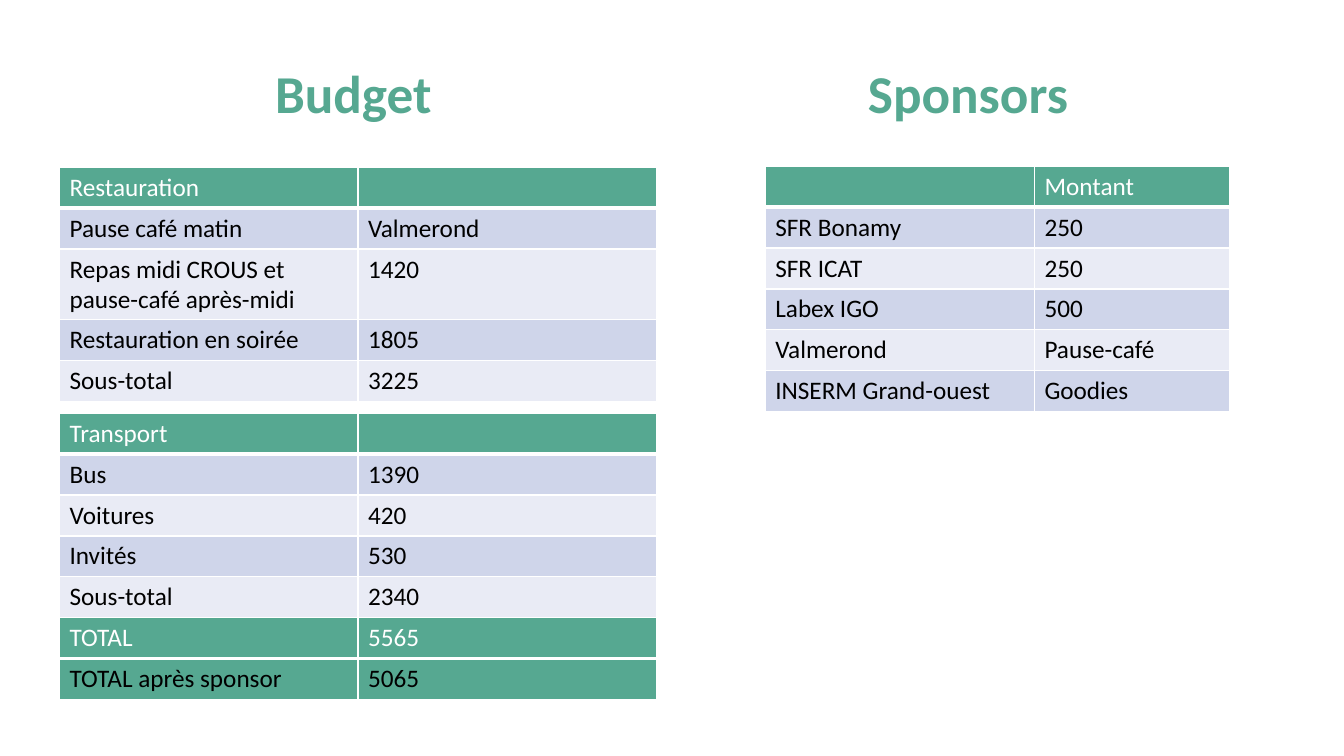
from lxml import etree
from pptx import Presentation
from pptx.dml.color import RGBColor
from pptx.enum.text import MSO_ANCHOR
from pptx.oxml.ns import qn
from pptx.util import Inches, Pt

GREEN = RGBColor(0x56, 0xA8, 0x91)
BLUE_BAND = RGBColor(0xCF, 0xD5, 0xEA)
PALE_BAND = RGBColor(0xE9, 0xEB, 0xF5)
WHITE = RGBColor(0xFF, 0xFF, 0xFF)
BLACK = RGBColor(0, 0, 0)
BANDS = (BLUE_BAND, PALE_BAND)

CATERING = [
    ("Restauration", ""),
    ("Pause café matin", "Valmerond"),
    ("Repas midi CROUS et pause-café après-midi", "1420"),
    ("Restauration en soirée", "1805"),
    ("Sous-total", "3225"),
]
TRANSPORT = [
    ("Transport", ""),
    ("Bus", "1390"),
    ("Voitures", "420"),
    ("Invités", "530"),
    ("Sous-total", "2340"),
]
TOTALS = [("TOTAL", "5565"), ("TOTAL après sponsor", "5065")]
SPONSORS = [
    ("", "Montant"),
    ("SFR Bonamy", "250"),
    ("SFR ICAT", "250"),
    ("Labex IGO", "500"),
    ("Valmerond", "Pause-café"),
    ("INSERM Grand-ouest", "Goodies"),
]

ROW = Pt(29.2)
LEFT = 0.59
TRANSPORT_TOP = Inches(4.1)
BUDGET_COLUMNS = (2.96, 2.96)
TITLES = [("Budget", 2.63, 1.84), ("Sponsors", 8.51, 2.29)]
TABLES = [
    (CATERING, LEFT, Inches(1.66), BUDGET_COLUMNS, BANDS),
    (TRANSPORT, LEFT, TRANSPORT_TOP, BUDGET_COLUMNS, BANDS),
    (TOTALS, LEFT, TRANSPORT_TOP + len(TRANSPORT) * ROW, BUDGET_COLUMNS, (GREEN,)),
    (SPONSORS, 7.59, Inches(1.65), (2.67, 1.94), BANDS),
]


def write(frame, text, size=18, color=BLACK, bold=False, spacing=None):
    para = frame.paragraphs[0]
    para.line_spacing = spacing
    para.font.size = Pt(size)
    if text:
        span = para.add_run()
        span.text = text
        span.font.name = "Calibri"
        span.font.size = Pt(size)
        span.font.bold = bold
        span.font.color.rgb = color


def set_borders(cell, bottom):
    properties = cell._tc.get_or_add_tcPr()
    widths = {"a:lnL": 1, "a:lnR": 1, "a:lnT": 1, "a:lnB": bottom}
    for position, (tag, width) in enumerate(widths.items()):
        line = etree.Element(qn(tag), w=str(Pt(width)))
        fill = etree.SubElement(line, qn("a:solidFill"))
        etree.SubElement(fill, qn("a:srgbClr"), val=str(WHITE))
        properties.insert(position, line)


def add_grid(page, rows, left, top, columns, bands):
    frame = page.shapes.add_table(
        len(rows), len(columns), Inches(left), top,
        Inches(sum(columns)), ROW * len(rows))
    table = frame.table
    table.first_row = table.horz_banding = False
    for column, width in zip(table.columns, columns):
        column.width = Inches(width)
    for index, texts in enumerate(rows):
        table.rows[index].height = ROW
        header = index == 0
        for cell, text in zip(table.rows[index].cells, texts):
            cell.fill.solid()
            cell.fill.fore_color.rgb = GREEN if header else bands[(index - 1) % len(bands)]
            set_borders(cell, bottom=3 if header else 1)
            write(cell.text_frame, text, color=WHITE if header else BLACK)


def main():
    deck = Presentation()
    deck.slide_width, deck.slide_height = Inches(13.33), Inches(7.5)
    page = deck.slides.add_slide(deck.slide_layouts[6])
    for title, left, width in TITLES:
        box = page.shapes.add_textbox(Inches(left), Inches(0.59), Inches(width), Inches(0.7))
        box.text_frame.word_wrap = True
        box.text_frame.vertical_anchor = MSO_ANCHOR.BOTTOM
        write(box.text_frame, title, size=38, color=GREEN, bold=True, spacing=0.9)
    for grid in TABLES:
        add_grid(page, *grid)
    deck.save("out.pptx")


if __name__ == "__main__":
    main()
